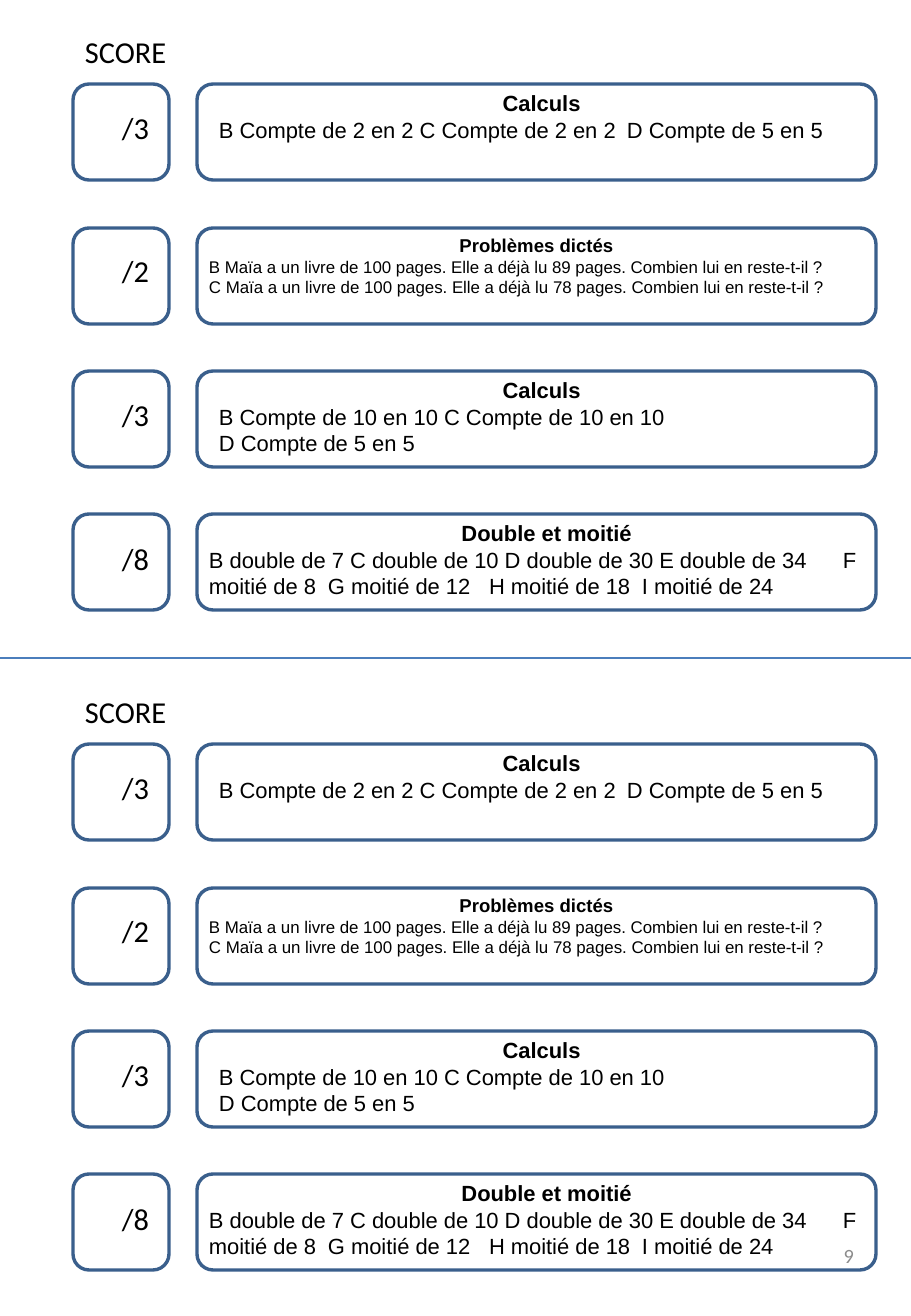
"""Build a score sheet: two equal halves of four boxed exercises."""
from lxml.etree import SubElement
from pptx import Presentation
from pptx.dml.color import RGBColor as RGB
from pptx.enum.shapes import MSO_CONNECTOR as LINK, MSO_SHAPE as SHAPE
from pptx.enum.text import MSO_ANCHOR as ANCHOR, PP_ALIGN as ALIGN
from pptx.oxml.ns import qn
from pptx.util import Pt

SCALE = 7526
WIDE, HIGH = 911, 1316
HALF, PITCH, SIDE = 660, 143.5, 96
LEFT, MAIN, INSET = 73, 197, 12
EDGE = RGB(0x3A, 0x5F, 0x8C)
RULE = RGB(0x4B, 0x7E, 0xBC)
INK = RGB(0x00, 0x00, 0x00)
GREY = RGB(0x8C, 0x8C, 0x8C)

BODY = {"name": "Arial", "size": Pt(13), "bold": False}
HEAD = BODY | {"bold": True}
NOTE = BODY | {"size": Pt(10)}
TITLE = HEAD | {"size": Pt(11)}
SCORE = {"name": "Calibri", "size": Pt(18)}
PAGE = SCORE | {"size": Pt(12)}

ROWS = [
    {"score": "/3", "title": "Calculs", "fonts": (HEAD, BODY),
     "area": (207, 669, 66), "tabs": [408],
     "lines": ["B Compte de 2 en 2 C Compte de 2 en 2\tD Compte de 5 en 5"]},
    {"score": "/2", "title": "Problèmes dictés", "fonts": (TITLE, NOTE),
     "area": (MAIN, 679, 76), "tabs": [],
     "lines": [f"{mark} Maïa a un livre de 100 pages. Elle a déjà lu {read} pages. "
               "Combien lui en reste-t-il ?" for mark, read in (("B", 89), ("C", 78))]},
    {"score": "/3", "title": "Calculs", "fonts": (HEAD, BODY),
     "area": (207, 669, 93), "tabs": [],
     "lines": ["B Compte de 10 en 10 C Compte de 10 en 10", "D Compte de 5 en 5"]},
    {"score": "/8", "title": "Double et moitié", "fonts": (HEAD, BODY),
     "area": (MAIN, 699, 93), "tabs": [119, 280, 433, 634],
     "lines": ["B double de 7 C double de 10 D double de 30 E double de 34\tF "
               "moitié de 8\tG moitié de 12\tH moitié de 18\tI moitié de 24"]},
]


def px(*nums):
    """Turn px lengths into EMU."""
    return [round(num) * SCALE for num in nums]


def add_box(slide, x, y, w):
    """Draw an unfilled rounded frame."""
    box = slide.shapes.add_shape(SHAPE.FLOWCHART_ALTERNATE_PROCESS, *px(x, y, w, SIDE))
    box.shadow.inherit = False
    box.fill.background()
    box.line.color.rgb = EDGE
    box.line.width = Pt(2)


def add_rule(slide, y):
    """Draw the line that parts the halves."""
    rule = slide.shapes.add_connector(LINK.STRAIGHT, *px(0, y, WIDE, y))
    rule.line.color.rgb = RULE
    rule.line.width = Pt(0.75)
    SubElement(rule.element.spPr, qn("a:effectLst"))


def add_frame(slide, x, y, w, h, pad=INSET):
    """Place a wrapping text box and return its text frame."""
    frame = slide.shapes.add_textbox(*px(x, y, w, h)).text_frame
    frame.word_wrap = True
    frame.margin_left, = px(pad)
    return frame


def add_text(para, text, font, align=ALIGN.LEFT, color=INK):
    """Write one styled run in a paragraph."""
    para.alignment = align
    run = para.add_run()
    run.text = text
    for key, value in font.items():
        setattr(run.font, key, value)
    run.font.color.rgb = color


def add_tabs(para, stops):
    """Set left tab stops on a paragraph."""
    tabs = SubElement(para._p.get_or_add_pPr(), qn("a:tabLst"))
    for pos in px(*stops):
        SubElement(tabs, qn("a:tab"), pos=str(pos), algn="l")


def add_row(slide, row, y):
    """Draw a score box and its exercise box."""
    add_box(slide, LEFT, y, SIDE)
    add_box(slide, MAIN, y, 679)
    score = add_frame(slide, 83, y + 19, SIDE, 49, 39)
    add_text(score.paragraphs[0], row["score"], SCORE)
    x, w, h = row["area"]
    frame = add_frame(slide, x, y, w, h)
    head, body = row["fonts"]
    add_text(frame.paragraphs[0], row["title"], head, ALIGN.CENTER)
    for line in row["lines"]:
        para = frame.add_paragraph()
        add_text(para, line, body)
        if row["tabs"]:
            add_tabs(para, row["tabs"])


def add_half(slide, top):
    """Draw the score label and four rows."""
    label = add_frame(slide, LEFT, top + 27, 163, 49)
    add_text(label.paragraphs[0], "SCORE", SCORE)
    for num, row in enumerate(ROWS):
        add_row(slide, row, top + 84 + num * PITCH)


def main():
    """Build and save the sheet."""
    deck = Presentation()
    deck.slide_width, deck.slide_height = px(WIDE, HIGH)
    slide = deck.slides.add_slide(deck.slide_layouts[6])
    add_rule(slide, HIGH / 2)
    for top in (0, HALF):
        add_half(slide, top)
    page = add_frame(slide, 654, 1220, 212, 70)
    page.vertical_anchor = ANCHOR.MIDDLE
    add_text(page.paragraphs[0], "9", PAGE, ALIGN.RIGHT, GREY)
    deck.save("out.pptx")


if __name__ == "__main__":
    main()
